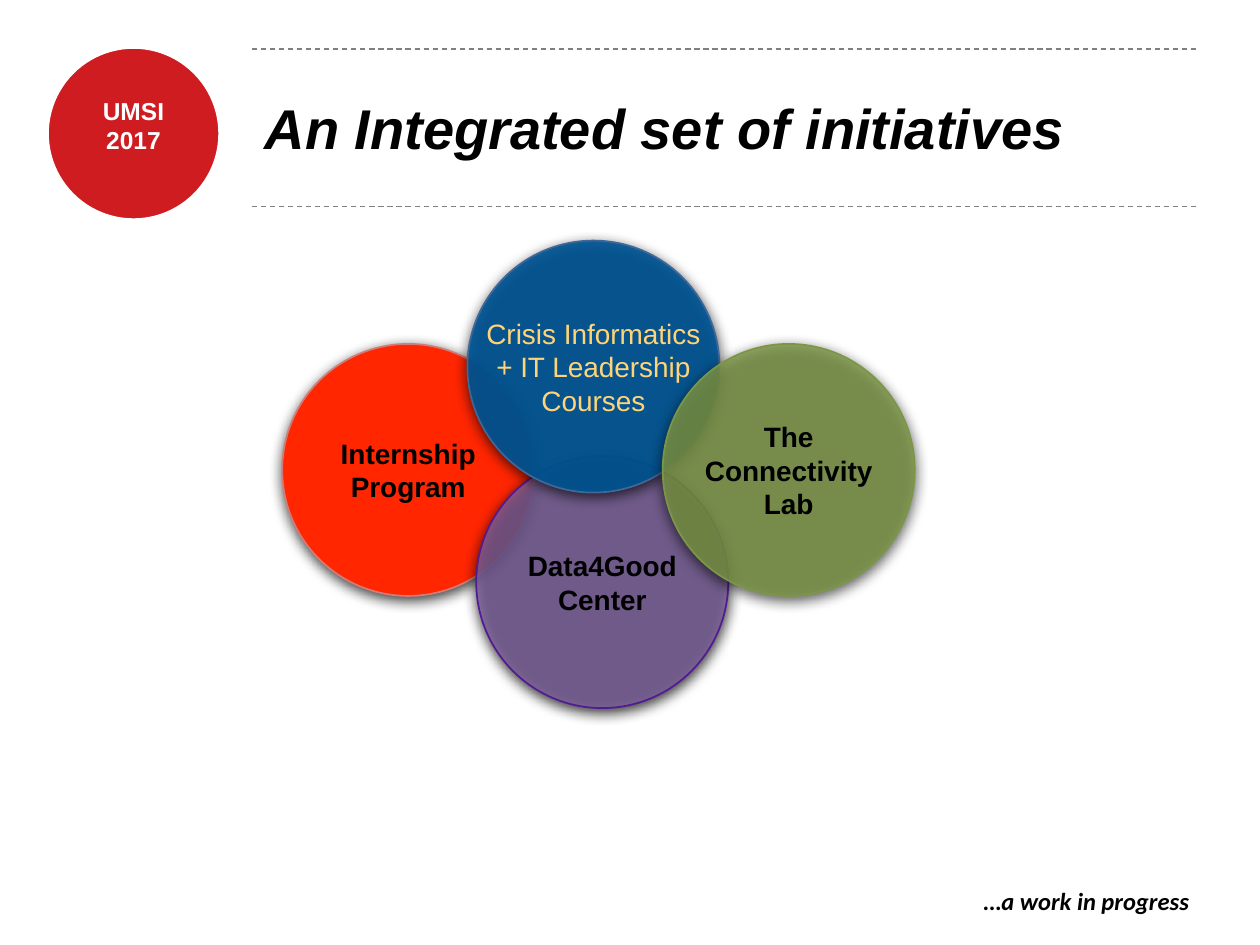
from dataclasses import dataclass
from lxml import etree
from pptx import Presentation
from pptx.dml.color import RGBColor
from pptx.enum.dml import MSO_LINE
from pptx.enum.shapes import MSO_CONNECTOR, MSO_SHAPE
from pptx.enum.text import MSO_ANCHOR, MSO_AUTO_SIZE, PP_ALIGN
from pptx.oxml.ns import qn
from pptx.util import Inches, Pt

OVAL, STRAIGHT, DASH = MSO_SHAPE.OVAL, MSO_CONNECTOR.STRAIGHT, MSO_LINE.DASH
LEFT, CENTER = PP_ALIGN.LEFT, PP_ALIGN.CENTER
TOP, MIDDLE = MSO_ANCHOR.TOP, MSO_ANCHOR.MIDDLE
GROW = MSO_AUTO_SIZE.SHAPE_TO_FIT_TEXT


@dataclass(frozen=True)
class Theme:
    font: str = "Arial"
    note_font: str = "Calibri"
    black: str = "000000"
    white: str = "FFFFFF"
    gold: str = "FFD479"
    badge: str = "CF1C21"
    rule: str = "808080"
    title_size: int = 32
    label_size: int = 16
    small_size: int = 14


THEME = Theme()
WIDTH, HEIGHT = 10, 7.5
DIAMETER = 2
RULE_LEFT, RULE_RIGHT = 0.2 * WIDTH, 0.95 * WIDTH
RULE_ROWS = (0.39, 1.64)
TITLE = "An Integrated set of initiatives"
BADGE = ["UMSI", "2017"]
NOTE = "…a work in progress"
INITIATIVES = [
    dict(lines=["Internship", "Program"], center=(3.24, 3.73), label=(1.41, 0.64),
         fill="FF2600", opacity=100, line="D07C79", color=THEME.black, bold=True),
    dict(lines=["Data4Good", "Center"], center=(4.78, 4.62), label=(1.41, 0.63),
         fill="8064A2", opacity=75, line="531B93", color=THEME.black, bold=True),
    dict(lines=["Crisis Informatics + IT Leadership Courses"], center=(4.71, 2.91),
         label=(1.86, 0.91), fill="005493", opacity=92, line="3F6797",
         color=THEME.gold, bold=False),
    dict(lines=["The Connectivity Lab"], center=(6.26, 3.73), label=(1.5, 0.91),
         fill="7C9647", opacity=82, line="7C9647", color=THEME.black, bold=True),
]


def write(frame, lines, *, size, color, font=THEME.font, bold=True, italic=False,
          align=LEFT, anchor=TOP, inset=0.05, wrap=True):
    frame.word_wrap = wrap
    frame.vertical_anchor = anchor
    frame.margin_left = frame.margin_right = Inches(inset)
    frame.margin_top = frame.margin_bottom = Inches(inset)
    for index, line in enumerate(lines):
        paragraph = frame.paragraphs[0] if index == 0 else frame.add_paragraph()
        paragraph.alignment = align
        run = paragraph.add_run()
        run.text = line
        run.font.name, run.font.size = font, Pt(size)
        run.font.bold, run.font.italic = bold, italic
        run.font.color.rgb = RGBColor.from_string(color)


def add_text(slide, box, lines, **style):
    frame = slide.shapes.add_textbox(*map(Inches, box)).text_frame
    write(frame, lines, **style)
    frame.auto_size = GROW


def centered(center, width, height):
    return center[0] - width / 2, center[1] - height / 2, width, height


def set_alpha(color, percent):
    etree.SubElement(color, qn("a:alpha"), val=str(percent * 1000))


def add_circle(slide, box, fill, line, line_width, opacity=100):
    circle = slide.shapes.add_shape(OVAL, *map(Inches, box))
    circle.shadow.inherit = False
    circle.fill.solid()
    circle.fill.fore_color.rgb = RGBColor.from_string(fill)
    circle.line.color.rgb = RGBColor.from_string(line)
    circle.line.width = Pt(line_width)
    if opacity < 100:
        set_alpha(circle._element.spPr.find(qn("a:solidFill"))[0], opacity)
    return circle


def add_shadow(shape):
    effects = shape._element.spPr.find(qn("a:effectLst"))
    shadow = etree.SubElement(effects, qn("a:outerShdw"), blurRad=str(Pt(8)),
                              dist=str(Pt(2)), dir="5400000", rotWithShape="0")
    set_alpha(etree.SubElement(shadow, qn("a:srgbClr"), val=THEME.black), 75)


def add_rule(slide, y):
    rule = slide.shapes.add_connector(
        STRAIGHT, *map(Inches, (RULE_LEFT, y, RULE_RIGHT, y)))
    rule.line.color.rgb = RGBColor.from_string(THEME.rule)
    rule.line.width = Pt(0.75)
    rule.line.dash_style = DASH
    etree.SubElement(rule._element.spPr, qn("a:effectLst"))


def main():
    presentation = Presentation()
    presentation.slide_width, presentation.slide_height = Inches(WIDTH), Inches(HEIGHT)
    slide = presentation.slides.add_slide(presentation.slide_layouts[5])

    title = slide.shapes.title
    title.left, title.top = Inches(RULE_LEFT), Inches(0.38)
    title.width, title.height = Inches(RULE_RIGHT - RULE_LEFT), Inches(1.25)
    write(title.text_frame, [TITLE], size=THEME.title_size, color=THEME.black,
          italic=True, anchor=MIDDLE, inset=0.1)

    add_circle(slide, (0.37, 0.37, 1.38, 1.38), THEME.badge, THEME.white, 2.5)
    add_text(slide, (0.43, 0.76, 1.26, 0.44), BADGE, size=THEME.small_size,
             color=THEME.white, align=CENTER, inset=0)
    for y in RULE_ROWS:
        add_rule(slide, y)

    for item in INITIATIVES:
        circle = add_circle(slide, centered(item["center"], DIAMETER, DIAMETER),
                            item["fill"], item["line"], 1, item["opacity"])
        add_shadow(circle)
        add_text(slide, centered(item["center"], *item["label"]), item["lines"],
                 size=THEME.label_size, color=item["color"], bold=item["bold"],
                 align=CENTER, anchor=MIDDLE)

    add_text(slide, (7.76, 6.98, 2.04, 0.32), [NOTE], size=THEME.small_size,
             color=THEME.black, font=THEME.note_font, italic=True, wrap=False)
    presentation.save("out.pptx")


if __name__ == "__main__":
    main()
